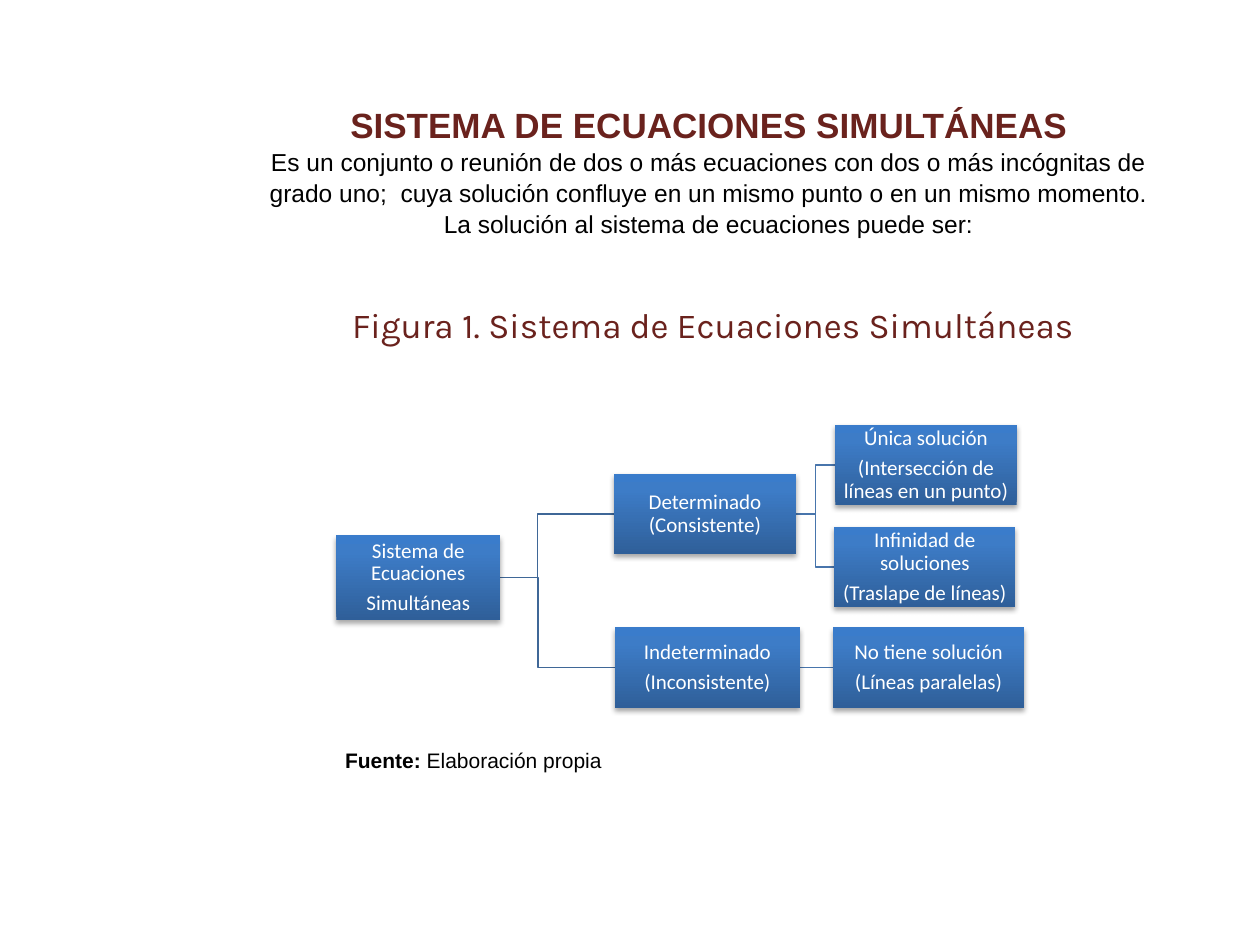
import pptx
import pptx.util
import pptx.dml.color
import pptx.enum.shapes
import pptx.enum.text
import pptx.oxml.ns
from lxml import etree

Inches = pptx.util.Inches
Pt = pptx.util.Pt
qn = pptx.oxml.ns.qn
Align = pptx.enum.text.PP_ALIGN
Anchor = pptx.enum.text.MSO_ANCHOR
Connector = pptx.enum.shapes.MSO_CONNECTOR

COLORS = {
    "heading": "6A221D",
    "body": "000000",
    "node_text": "FFFFFF",
    "node_bottom": "2F5F99",
    "node_middle": "3D7CC7",
    "node_top": "3A7CCB",
    "root_link": "3F6797",
    "leaf_link": "4875AC",
    "shadow": "000000",
}

NODES = {
    "root": ((2.67, 4.25, 1.3, 0.67), ["Sistema de Ecuaciones", "Simultáneas"]),
    "determined": ((4.87, 3.76, 1.45, 0.64), ["Determinado (Consistente)"]),
    "single": ((6.63, 3.37, 1.44, 0.64),
               ["Única solución", "(Intersección de líneas en un punto)"]),
    "infinite": ((6.62, 4.18, 1.44, 0.64),
                 ["Infinidad de soluciones", "(Traslape de líneas)"]),
    "undetermined": ((4.88, 4.98, 1.47, 0.64), ["Indeterminado", "(Inconsistente)"]),
    "none": ((6.61, 4.98, 1.52, 0.64), ["No tiene solución", "(Líneas paralelas)"]),
}

LINKS = [
    ("undetermined", "none", "leaf_link"),
    ("root", "undetermined", "root_link"),
    ("determined", "infinite", "leaf_link"),
    ("determined", "single", "leaf_link"),
    ("root", "determined", "root_link"),
]

ROOT_OVERLAP = 0.31


def rgb(name):
    return pptx.dml.color.RGBColor.from_string(COLORS[name])


def write(para, text, size=12, font="Arial", color="body", bold=False):
    span = para.add_run()
    span.text = text
    span.font.size = Pt(size)
    span.font.name = font
    span.font.bold = bold
    span.font.color.rgb = rgb(color)


def add_text_box(page, box, align=Align.LEFT, spacing=1.0):
    frame = page.shapes.add_textbox(*map(Inches, box)).text_frame
    frame.word_wrap = True
    para = frame.paragraphs[0]
    para.alignment = align
    para.line_spacing = spacing
    return para


def add_introduction(page, box):
    para = add_text_box(page, box, Align.CENTER, 1.05)
    write(para, "SISTEMA DE ECUACIONES SIMULTÁNEAS", size=20, color="heading", bold=True)
    for line in (
        "Es un conjunto o reunión de dos o más ecuaciones con dos o más incógnitas "
        "de grado uno;  cuya solución confluye en un mismo punto o en un mismo momento.",
        "La solución al sistema de ecuaciones puede ser:",
    ):
        para.add_line_break()
        write(para, line, size=14)


def add_caption(page, box):
    para = add_text_box(page, box, Align.CENTER, 1.1)
    write(para, "Figura 1. Sistema de Ecuaciones Simultáneas",
          size=20, font="Karla", color="heading")


def add_source_note(page, box):
    para = add_text_box(page, box)
    write(para, "Fuente: ", bold=True)
    write(para, "Elaboración propia")


def add_color(parent, name, alpha=None):
    color = etree.SubElement(parent, qn("a:srgbClr"), val=COLORS[name])
    if alpha is not None:
        etree.SubElement(color, qn("a:alpha"), val=str(alpha * 1000))


def style_node(shape):
    shape.line.fill.background()
    shape.fill.gradient()
    shape.fill.gradient_angle = 90
    properties = shape.element.spPr
    stops = properties.find(".//" + qn("a:gsLst"))
    for stop in list(stops):
        stops.remove(stop)
    for position, name in ((0, "node_bottom"), (80, "node_middle"), (100, "node_top")):
        add_color(etree.SubElement(stops, qn("a:gs"), pos=str(position * 1000)), name)
    shape.shadow.inherit = False
    shadow = etree.SubElement(
        properties.find(qn("a:effectLst")), qn("a:outerShdw"),
        blurRad=str(Pt(3.1)), dist=str(Pt(1.8)), dir="5400000", rotWithShape="0")
    add_color(shadow, "shadow", 35)


def add_node(page, box, lines):
    shape = page.shapes.add_shape(
        pptx.enum.shapes.MSO_SHAPE.RECTANGLE, *map(Inches, box))
    style_node(shape)
    frame = shape.text_frame
    frame.word_wrap = True
    frame.vertical_anchor = Anchor.MIDDLE
    frame.margin_left = frame.margin_right = Inches(0.01)
    frame.margin_top = frame.margin_bottom = Inches(0.01)
    for index, line in enumerate(lines):
        para = frame.add_paragraph() if index else frame.paragraphs[0]
        para.alignment = Align.CENTER
        para.line_spacing = 0.9
        para.space_after = Pt(4.2)
        write(para, line, font="Calibri", color="node_text")


def add_link(page, parent, child, color):
    left, top, width, height = NODES[parent][0]
    start_x = left + width - (ROOT_OVERLAP if parent == "root" else 0)
    start_y = top + height / 2
    end_x, child_top, _, child_height = NODES[child][0]
    end_y = child_top + child_height / 2
    kind = Connector.STRAIGHT if start_y == end_y else Connector.ELBOW
    link = page.shapes.add_connector(kind, *map(Inches, (start_x, start_y, end_x, end_y)))
    link.line.color.rgb = rgb(color)
    link.line.width = Pt(0.75)
    etree.SubElement(link.element.spPr, qn("a:effectLst"))


def add_diagram(page):
    for link in LINKS:
        add_link(page, *link)
    for box, lines in NODES.values():
        add_node(page, box, lines)


def main():
    deck = pptx.Presentation()
    deck.slide_width = Inches(10)
    deck.slide_height = Inches(7.5)
    page = deck.slides.add_slide(deck.slide_layouts[6])
    add_introduction(page, (1.8, 0.76, 7.65, 1.57))
    add_caption(page, (1.81, 2.33, 7.7, 4.05))
    add_diagram(page)
    add_source_note(page, (2.64, 5.88, 6.38, 0.3))
    deck.save("out.pptx")


if __name__ == "__main__":
    main()
